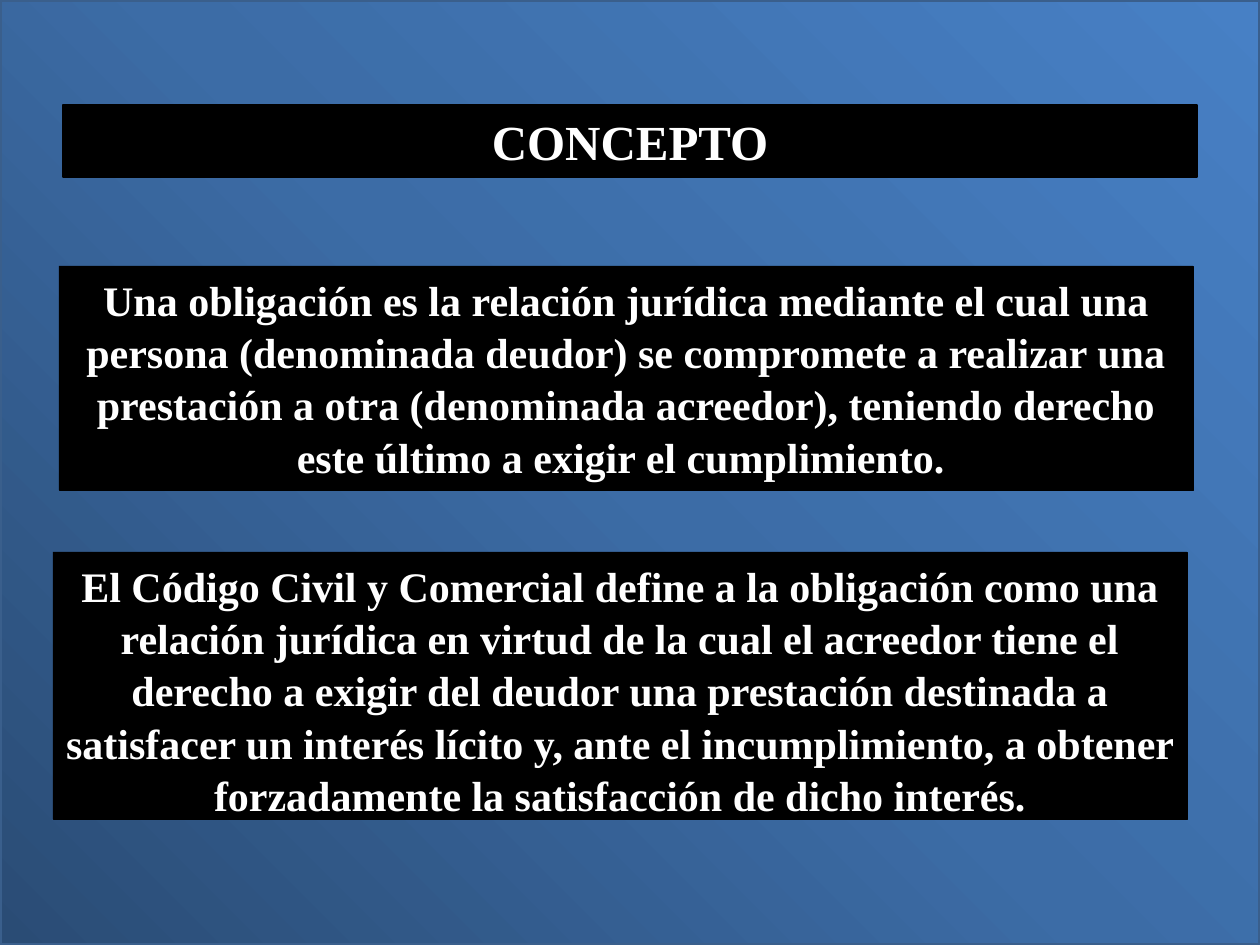
from lxml import etree
from pptx import Presentation, util as u
from pptx.dml.color import RGBColor
from pptx.enum import shapes, text
from pptx.oxml.ns import qn

PX_PER_INCH = 126
SLIDE_W, SLIDE_H = 1260, 945
BOX_W = 1134

WHITE = RGBColor(0xFF, 0xFF, 0xFF)
BLACK = RGBColor(0x00, 0x00, 0x00)
PANEL_EDGE = RGBColor(0x3A, 0x5F, 0x8C)
PANEL_STOPS = [
    (0, RGBColor(0x2A, 0x4C, 0x75)),
    (50, RGBColor(0x3C, 0x6C, 0xA6)),
    (100, RGBColor(0x47, 0x80, 0xC5)),
]

FONT = "Times New Roman"
TITLE = "CONCEPTO"
# Each definition: left, top, height, wording
DEFINITIONS = [
    (59, 266, 224,
     "Una obligación es la relación jurídica mediante el cual una persona "
     "(denominada deudor) se compromete a realizar una prestación a otra "
     "(denominada acreedor), teniendo derecho este último a exigir el "
     "cumplimiento. "),
    (53, 552, 267,
     "El Código Civil y Comercial define a la obligación como una relación "
     "jurídica en virtud de la cual el acreedor tiene el derecho a exigir del "
     "deudor una prestación destinada a satisfacer un interés lícito y, ante "
     "el incumplimiento, a obtener forzadamente la satisfacción de dicho "
     "interés."),
]


def px(length):
    return u.Emu(round(length * 914400 / PX_PER_INCH))


def place(box, left, top, width, height):
    box.left, box.top = px(left), px(top)
    box.width, box.height = px(width), px(height)


def paint(box, fill, edge, weight):
    box.fill.solid()
    box.fill.fore_color.rgb = fill
    box.line.color.rgb = edge
    box.line.width = u.Pt(weight)


def write(box, wording, size=24, color=WHITE, bold=True, spacing=1.0):
    frame = box.text_frame
    frame.word_wrap = True
    frame.auto_size = text.MSO_AUTO_SIZE.NONE
    frame.vertical_anchor = text.MSO_ANCHOR.TOP
    paragraph = frame.paragraphs[0]
    paragraph.alignment = text.PP_ALIGN.CENTER
    paragraph.line_spacing = spacing
    run = paragraph.add_run()
    run.text = wording
    run.font.name = FONT
    run.font.size = u.Pt(size)
    run.font.bold = bold
    run.font.color.rgb = color


def corner_gradient(panel, stops):
    """Fill with a circular gradient that starts at the bottom left corner."""
    panel.fill.gradient()
    gradient = panel.fill._xPr.find(qn("a:gradFill"))
    for child in list(gradient):
        gradient.remove(child)
    stop_list = etree.SubElement(gradient, qn("a:gsLst"))
    for percent, color in stops:
        stop = etree.SubElement(stop_list, qn("a:gs"), pos=str(percent * 1000))
        etree.SubElement(stop, qn("a:srgbClr"), val=str(color))
    circle = etree.SubElement(gradient, qn("a:path"), path="circle")
    etree.SubElement(circle, qn("a:fillToRect"), t="100000", r="100000")


def add_backdrop(slide):
    panel = slide.shapes.add_shape(
        shapes.MSO_SHAPE.RECTANGLE, 0, 0, px(SLIDE_W), px(SLIDE_H))
    panel.shadow.inherit = False
    corner_gradient(panel, PANEL_STOPS)
    panel.line.color.rgb = PANEL_EDGE
    panel.line.width = u.Pt(2)
    # Send behind the title placeholder
    slide.shapes._spTree.insert(2, panel._element)


def add_title(slide):
    title = slide.shapes.title
    place(title, 63, 105, BOX_W, 72)
    paint(title, BLACK, BLACK, 0.75)
    write(title, TITLE, size=28)


def add_definition(slide, left, top, height, wording):
    definition = slide.shapes.add_textbox(0, 0, 0, 0)
    place(definition, left, top, BOX_W, height)
    paint(definition, BLACK, BLACK, 0.25)
    write(definition, wording, spacing=1.04)


def main():
    deck = Presentation()
    deck.slide_width, deck.slide_height = px(SLIDE_W), px(SLIDE_H)
    slide = deck.slides.add_slide(deck.slide_layouts[5])

    add_backdrop(slide)
    add_title(slide)
    for definition in DEFINITIONS:
        add_definition(slide, *definition)

    deck.save("out.pptx")


if __name__ == "__main__":
    main()
